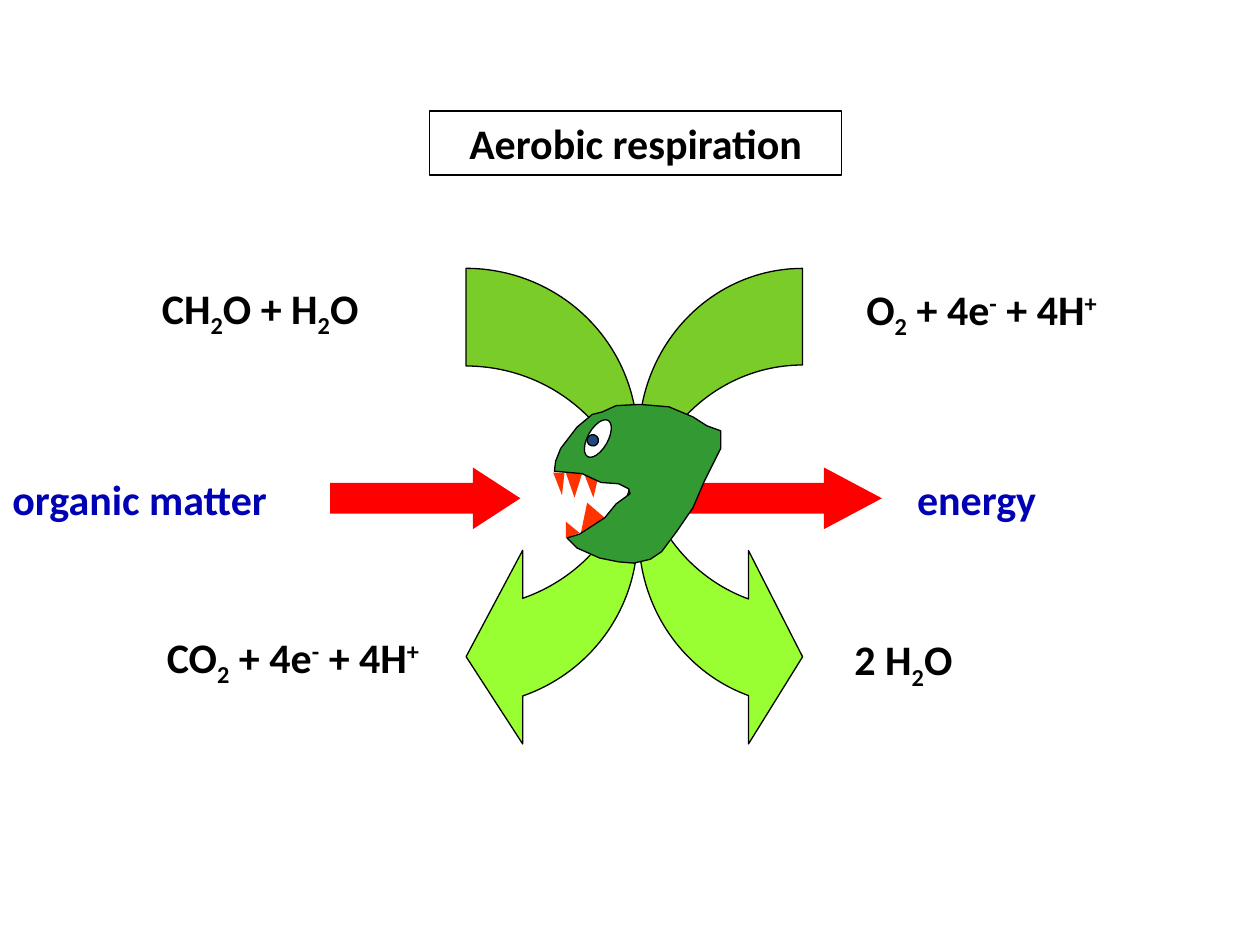
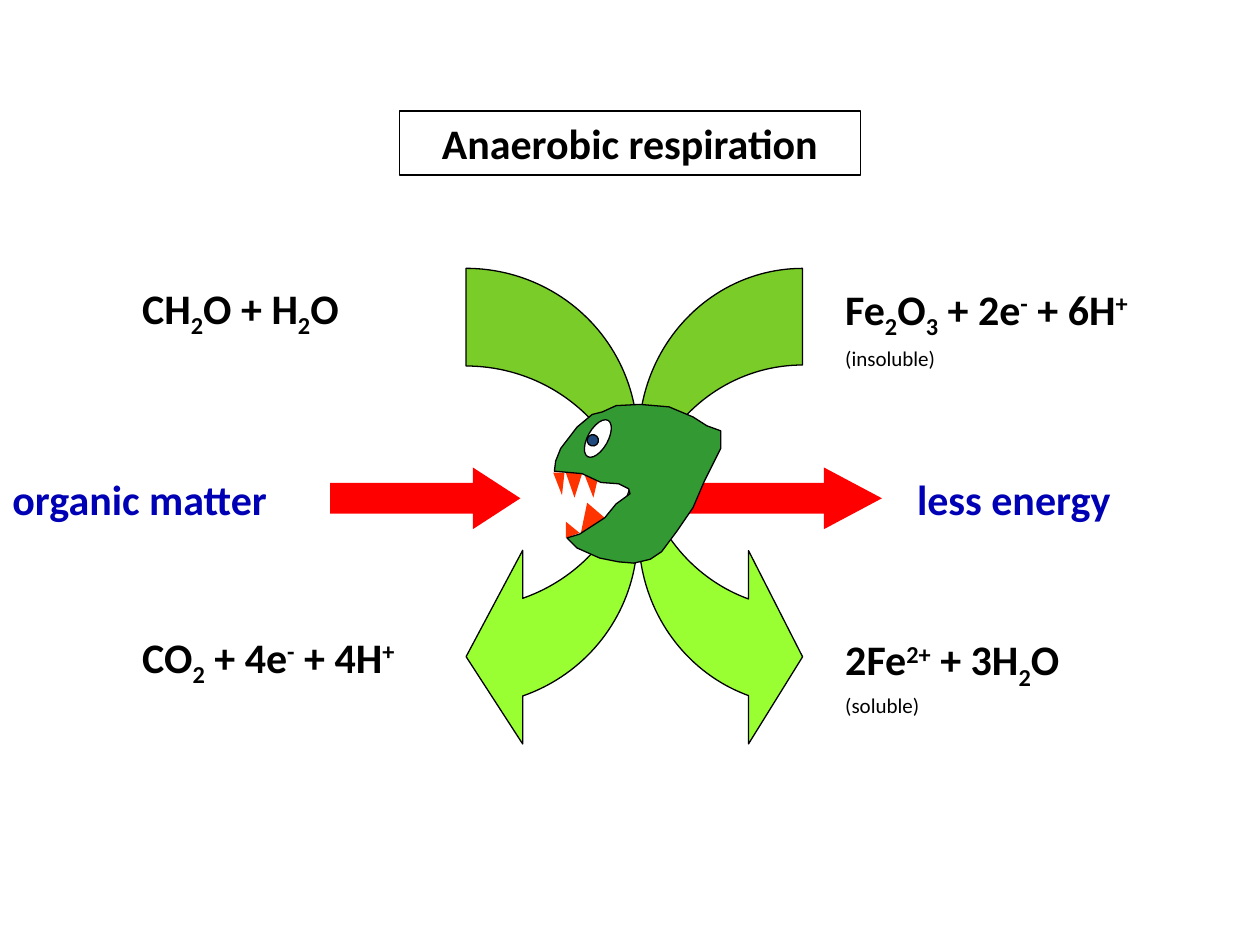
"""Build two slides that contrast aerobic and anaerobic respiration."""
from dataclasses import dataclass

from pptx import Presentation
from pptx.dml.color import RGBColor
from pptx.enum.shapes import MSO_SHAPE as Shp
from pptx.enum.text import MSO_ANCHOR as Anchor
from pptx.enum.text import MSO_AUTO_SIZE as AutoSize
from pptx.enum.text import PP_ALIGN as Align
from pptx.util import Inches, Pt

COLORS = {
    "text": "000000", "outline": "000000", "flow": "0000B4", "arrow": "FF0000",
    "cycle": "99FF33", "tooth": "FF3300", "head": "339933", "eye": "FFFFFF",
    "pupil": "1F497D",
}
FONT = "Calibri"
TITLE_ONLY = 5
BASELINES = {"_": "-25000", "^": "30000"}
FLOW_Y = 3.71
LEFT_X = 1.03

TEETH = [
    [(4.49, 4.27), (4.49, 4.14), (4.6, 4.23)],
    [(4.61, 4.23), (4.66, 3.99), (4.8, 4.11)],
    [(4.39, 3.75), (4.46, 3.93), (4.48, 3.75)],
    [(4.49, 3.75), (4.56, 3.95), (4.62, 3.76)],
    [(4.64, 3.77), (4.71, 3.95), (4.74, 3.82)],
]
HEAD = [
    (4.5, 4.27), (4.58, 4.35), (4.76, 4.43), (4.91, 4.46), (5.03, 4.47),
    (5.16, 4.44), (5.25, 4.38), (5.37, 4.22), (5.5, 4.03), (5.59, 3.82),
    (5.72, 3.56), (5.72, 3.42), (5.61, 3.38), (5.5, 3.31), (5.31, 3.23),
    (5.08, 3.21), (4.89, 3.22), (4.78, 3.27), (4.7, 3.29), (4.58, 3.39),
    (4.45, 3.56), (4.41, 3.66), (4.4, 3.74), (4.62, 3.76), (4.77, 3.83),
    (4.91, 3.84), (4.99, 3.88), (5, 3.92), (4.89, 4), (4.8, 4.11), (4.6, 4.24),
]


@dataclass
class Part:
    kind: Shp
    box: tuple[float, float, float, float]
    fill: str
    adjustments: tuple[float, ...] = ()
    rotation: float = 0
    flipped: bool = False
    outlined: bool = True


@dataclass
class Label:
    text: str
    box: tuple[float, float, float, float]
    color: str = "text"
    size: int = 24
    bold: bool = True
    align: Align = Align.LEFT
    auto_size: AutoSize = AutoSize.SHAPE_TO_FIT_TEXT


@dataclass
class Respiration:
    title: Label
    labels: list[Label]


FOOD_ARROW = Part(Shp.RIGHT_ARROW, (2.62, FLOW_Y, 1.51, 0.49), "arrow",
                  (0.5, 0.77), outlined=False)
ENERGY_ARROW = Part(Shp.RIGHT_ARROW, (5.17, FLOW_Y, 1.83, 0.49), "arrow",
                    (0.5, 0.94), outlined=False)
CYCLES = [
    Part(Shp.CURVED_RIGHT_ARROW, (5.07, 2.13, 1.3, 3.85), "cycle",
         (0.59, 1.18, 0.33)),
    Part(Shp.CURVED_RIGHT_ARROW, (3.7, 2.13, 1.36, 3.85), "cycle",
         (0.57, 1.13, 0.33), flipped=True),
]
EYE = [
    Part(Shp.OVAL, (4.58, 3.4, 0.33, 0.16), "eye", rotation=299.4),
    Part(Shp.OVAL, (4.66, 3.45, 0.09, 0.09), "pupil", rotation=316.6),
]


def title(text: str, left: float, width: float) -> Label:
    """Describe a centred heading in a frame of fixed size."""
    return Label(text, (left, 0.88, width, 0.51), align=Align.CENTER,
                 auto_size=AutoSize.NONE)


def formula(text: str, left: float, top: float, width: float,
            align: Align = Align.LEFT) -> Label:
    """Describe one side of a reaction."""
    return Label(text, (left, top, width, 0.5), align=align)


def flow(text: str, left: float, width: float) -> Label:
    """Describe a blue caption beside a red arrow."""
    return Label(text, (left, FLOW_Y, width, 0.5), color="flow")


def note(text: str, top: float, width: float) -> Label:
    """Describe a small remark under a formula."""
    return Label(text, (6.61, top, width, 0.3), size=12, bold=False)


def left_side(align: Align) -> list[Label]:
    """Describe the oxidation of organic matter."""
    return [
        formula("CO|_2| + 4e|^-| + 4H|^+", LEFT_X, 4.96, 2.59, align),
        formula("CH|_2|O + H|_2|O", LEFT_X, 2.19, 2.07, align),
        flow("organic matter", 0, 2.52),
    ]


SLIDES = [
    Respiration(title("Aerobic respiration", 3.41, 3.27), [
        *left_side(Align.CENTER),
        formula("O|_2| + 4e|^-| + 4H|^+", 6.62, 2.2, 2.34, Align.CENTER),
        formula("2 H|_2|O", 6.62, 4.98, 1.1, Align.CENTER),
        flow("energy", 7.18, 1.3),
    ]),
    Respiration(title("Anaerobic respiration", 3.17, 3.66), [
        *left_side(Align.LEFT),
        formula("Fe|_2|O|_3| + 2e|^-| + 6H|^+", 6.61, 2.2, 2.86),
        formula("2Fe|^2+| + 3H|_2|O", 6.61, 4.98, 2.22),
        flow("less energy", 7.18, 2.04),
        note("(insoluble)", 2.69, 0.97),
        note("(soluble)", 5.45, 0.84),
    ]),
]


def rgb(name: str) -> RGBColor:
    """Look up a colour."""
    return RGBColor.from_string(COLORS[name])


def outline(sp) -> None:
    """Give a shape the thin black line."""
    sp.line.color.rgb = rgb("outline")
    sp.line.width = Pt(0.75)


def style(sp, fill: str, outlined: bool) -> None:
    """Set fill and line and drop the shadow."""
    sp.shadow.inherit = False
    sp.fill.solid()
    sp.fill.fore_color.rgb = rgb(fill)
    if outlined:
        outline(sp)
    else:
        sp.line.fill.background()


def draw_part(shapes, part: Part) -> None:
    """Draw a preset shape."""
    sp = shapes.add_shape(part.kind, *map(Inches, part.box))
    for i, value in enumerate(part.adjustments):
        sp.adjustments[i] = value
    sp.rotation = part.rotation
    if part.flipped:
        sp._element.spPr.xfrm.set("flipH", "1")
    style(sp, part.fill, part.outlined)


def draw_outline(shapes, points: list[tuple[float, float]], fill: str,
                 outlined: bool) -> None:
    """Draw a closed polygon."""
    start, *rest = [(Inches(x), Inches(y)) for x, y in points]
    builder = shapes.build_freeform(*start)
    builder.add_line_segments(rest, close=True)
    style(builder.convert_to_shape(), fill, outlined)


def draw_microbe(shapes) -> None:
    """Draw the hungry microbe as one group."""
    group = shapes.add_group_shape()
    for tooth in TEETH:
        draw_outline(group.shapes, tooth, "tooth", False)
    draw_outline(group.shapes, HEAD, "head", True)
    for part in EYE:
        draw_part(group.shapes, part)


def write(sp, label: Label) -> None:
    """Fill a text shape, with _ for subscript and ^ for superscript parts."""
    tf = sp.text_frame
    tf.word_wrap = False
    tf.auto_size = label.auto_size
    tf.vertical_anchor = Anchor.TOP
    p = tf.paragraphs[0]
    p.alignment = label.align
    for piece in label.text.split("|"):
        r = p.add_run()
        r.text = piece.lstrip("_^")
        r.font.name = FONT
        r.font.size = Pt(label.size)
        r.font.bold = label.bold
        r.font.color.rgb = rgb(label.color)
        if piece[0] in BASELINES:
            r.font._element.set("baseline", BASELINES[piece[0]])


def draw_title(slide, label: Label) -> None:
    """Place and frame the title placeholder."""
    sp = slide.shapes.title
    sp.left, sp.top, sp.width, sp.height = map(Inches, label.box)
    write(sp, label)
    outline(sp)


def add_slide(prs, content: Respiration) -> None:
    """Add one respiration slide."""
    slide = prs.slides.add_slide(prs.slide_layouts[TITLE_ONLY])
    shapes = slide.shapes
    draw_title(slide, content.title)
    for part in [ENERGY_ARROW, *CYCLES]:
        draw_part(shapes, part)
    draw_microbe(shapes)
    draw_part(shapes, FOOD_ARROW)
    for label in content.labels:
        write(shapes.add_textbox(*map(Inches, label.box)), label)


def main() -> None:
    """Build and save the presentation."""
    prs = Presentation()
    prs.slide_width, prs.slide_height = Inches(10), Inches(7.5)
    for content in SLIDES:
        add_slide(prs, content)
    prs.save("out.pptx")


if __name__ == "__main__":
    main()
